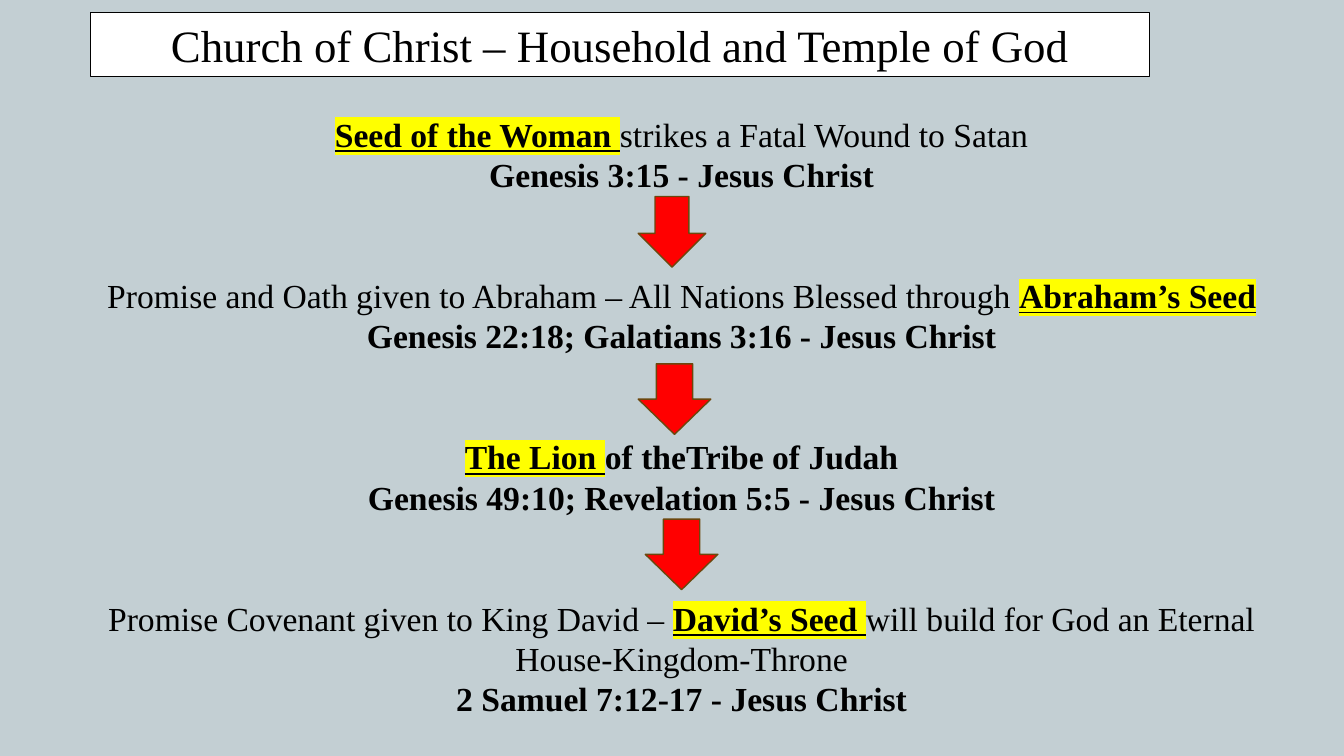
"""Build the slide on the promised seed, from Genesis to King David."""
from dataclasses import dataclass

import lxml.etree
import pptx
import pptx.dml.color
import pptx.enum.shapes
import pptx.enum.text
import pptx.oxml.ns
import pptx.util

Inches = pptx.util.Inches
Pt = pptx.util.Pt


@dataclass(frozen=True)
class Theme:
    """Hold the colours, font and type sizes."""
    back: str = "C3CFD3"
    ink: str = "000000"
    paper: str = "FFFFFF"
    mark: str = "FFFF00"
    arrow: str = "FF0000"
    edge: str = "6C470D"
    font: str = "Times New Roman"
    title: int = 32
    body: int = 24
    pitch: float = 28.8


THEME = Theme()
PLAIN, BOLD, MARK = "plain", "bold", "mark"
TITLE = "Church of Christ – Household and Temple of God"
STEPS = [
    [
        [("Seed of the Woman ", MARK), ("strikes a Fatal Wound to Satan", PLAIN)],
        [("Genesis 3:15 - Jesus Christ", BOLD)],
    ],
    [
        [("Promise and Oath given to Abraham – All Nations Blessed through ", PLAIN),
         ("Abraham’s Seed", MARK)],
        [("Genesis 22:18; Galatians 3:16 - Jesus Christ", BOLD)],
    ],
    [
        [("The Lion ", MARK), ("of theTribe of Judah", BOLD)],
        [("Genesis 49:10; Revelation 5:5 - Jesus Christ", BOLD)],
    ],
    [
        [("Promise Covenant given to King David – ", PLAIN), ("David’s Seed ", MARK),
         ("will build for God an Eternal", PLAIN)],
        [("House-Kingdom-Throne", PLAIN)],
        [("2 Samuel 7:12-17 - Jesus Christ", BOLD)],
    ],
]
ARROWS = [(6.33, 1.95, 0.67), (6.33, 3.61, 0.72), (6.4, 5.15, 0.72)]


def rgb(code):
    """Turn a hex code into a colour."""
    return pptx.dml.color.RGBColor.from_string(code)


def style(run, size, kind=PLAIN):
    """Set the font of a run, with a highlight for marked words."""
    font = run.font
    font.name = THEME.font
    font.size = Pt(size)
    font.bold = kind != PLAIN
    font.underline = kind == MARK
    font.color.rgb = rgb(THEME.ink)
    if kind == MARK:
        qn = pptx.oxml.ns.qn
        glow = lxml.etree.Element(qn("a:highlight"))
        lxml.etree.SubElement(glow, qn("a:srgbClr"), val=THEME.mark)
        font._element.find(qn("a:solidFill")).addnext(glow)


def add_form(slide, kind, box, fill, line, width):
    """Add a filled and outlined preset shape."""
    form = slide.shapes.add_shape(kind, *map(Inches, box))
    form.shadow.inherit = False
    form.fill.solid()
    form.fill.fore_color.rgb = rgb(fill)
    form.line.color.rgb = rgb(line)
    form.line.width = Pt(width)
    return form


def add_title(slide):
    """Add the framed title."""
    kind = pptx.enum.shapes.MSO_SHAPE.RECTANGLE
    form = add_form(slide, kind, (0.9, 0.12, 10.5, 0.64), THEME.paper, THEME.ink, 0.75)
    form.text_frame.text = TITLE
    para = form.text_frame.paragraphs[0]
    para.alignment = pptx.enum.text.PP_ALIGN.CENTER
    style(para.runs[0], THEME.title)


def add_steps(slide):
    """Add the verses, with room for an arrow between steps."""
    box = slide.shapes.add_textbox(*map(Inches, (0.54, 1.08, 12.44, 6.16)))
    frame = box.text_frame
    frame.word_wrap = True
    for i, step in enumerate(STEPS):
        for j, line in enumerate(step):
            first = i == j == 0
            para = frame.paragraphs[0] if first else frame.add_paragraph()
            para.alignment = pptx.enum.text.PP_ALIGN.CENTER
            para.line_spacing = Pt(THEME.pitch)
            if i and j == 0:
                para.space_before = Pt(2 * THEME.pitch)
            for text, kind in line:
                run = para.add_run()
                run.text = text
                style(run, THEME.body, kind)


def main():
    """Build and save the slide."""
    deck = pptx.Presentation()
    deck.slide_width = Inches(13.33)
    deck.slide_height = Inches(7.5)
    slide = deck.slides.add_slide(deck.slide_layouts[6])
    slide.background.fill.solid()
    slide.background.fill.fore_color.rgb = rgb(THEME.back)
    add_steps(slide)
    kind = pptx.enum.shapes.MSO_SHAPE.DOWN_ARROW
    for left, top, width in ARROWS:
        add_form(slide, kind, (left, top, width, 0.7), THEME.arrow, THEME.edge, 1)
    add_title(slide)
    deck.save("out.pptx")


if __name__ == "__main__":
    main()
